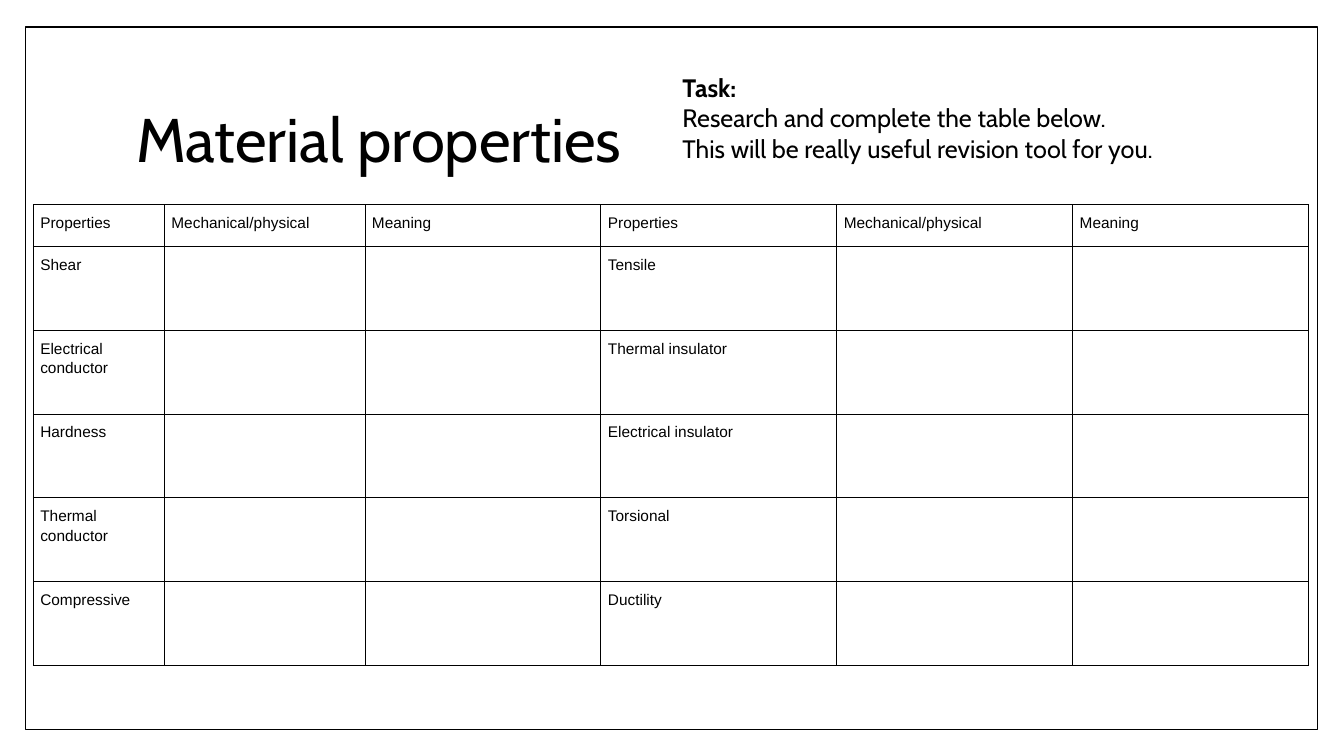
import pptx
import pptx.util
import pptx.dml.color
import pptx.enum.shapes
import pptx.enum.text
import pptx.oxml
import pptx.oxml.ns
from pptx.util import Inches

BLACK, WHITE = "000000", "FFFFFF"
HEADINGS = ["Properties", "Mechanical/physical", "Meaning"]
PROPERTY_PAIRS = [
    ("Shear", "Tensile"),
    ("Electrical conductor", "Thermal insulator"),
    ("Hardness", "Electrical insulator"),
    ("Thermal conductor", "Torsional"),
    ("Compressive", "Ductility"),
]
TASK_LINES = [
    "Task:",
    "Research and complete the table below.",
    "This will be really useful revision tool for you.",
]


def color(hex_value):
    return pptx.dml.color.RGBColor.from_string(hex_value)


class Worksheet:
    """Holds the style and the current slide."""

    display_font, table_font = "Cabin", "Arial"

    def __init__(self, page):
        self.page = page

    def format_text(self, frame, font, size, spacing=None):
        for para in frame.paragraphs:
            para.alignment = pptx.enum.text.PP_ALIGN.LEFT
            para.line_spacing = spacing
            for span in para.runs:
                span.font.name = font
                span.font.size = pptx.util.Pt(size)
                span.font.color.rgb = color(BLACK)

    def title(self, text, left, top, width, height):
        box = self.page.shapes.title
        box.left, box.top = Inches(left), Inches(top)
        box.width, box.height = Inches(width), Inches(height)
        frame = box.text_frame
        frame.text = text
        frame.auto_size = pptx.enum.text.MSO_AUTO_SIZE.NONE
        frame.vertical_anchor = pptx.enum.text.MSO_ANCHOR.MIDDLE
        self.format_text(frame, self.display_font, 44, 0.9)

    def border(self, left, top, width, height):
        box = self.page.shapes.add_shape(
            pptx.enum.shapes.MSO_SHAPE.RECTANGLE,
            Inches(left), Inches(top), Inches(width), Inches(height))
        box.shadow.inherit = False
        box.fill.solid()
        box.fill.fore_color.rgb = color(WHITE)
        box.line.color.rgb = color(BLACK)
        box.line.width = pptx.util.Pt(1)
        # The border lies behind the title
        self.page.shapes.title.element.addprevious(box.element)

    def task(self, lines, left, top, width, height):
        box = self.page.shapes.add_textbox(
            Inches(left), Inches(top), Inches(width), Inches(height))
        frame = box.text_frame
        frame.word_wrap = True
        frame.auto_size = pptx.enum.text.MSO_AUTO_SIZE.SHAPE_TO_FIT_TEXT
        frame.text = "\n".join(lines)
        self.format_text(frame, self.display_font, 18)
        frame.paragraphs[0].runs[0].font.bold = True

    def cell(self, cell, text):
        cell.margin_left = cell.margin_right = Inches(0.07)
        cell.margin_top = cell.margin_bottom = Inches(0.07)
        cell.text = text
        self.format_text(cell.text_frame, self.table_font, 11, 1.15)
        properties = cell._tc.get_or_add_tcPr()
        for side in "LRTB":
            properties.append(pptx.oxml.parse_xml(
                f'<a:ln{side} {pptx.oxml.ns.nsdecls("a")} w="{pptx.util.Pt(0.75)}">'
                f'<a:solidFill><a:srgbClr val="{BLACK}"/></a:solidFill></a:ln{side}>'))
        cell.fill.background()

    def table(self, rows, left, top, widths, heights):
        table = self.page.shapes.add_table(
            len(rows), len(widths), Inches(left), Inches(top),
            Inches(sum(widths)), Inches(sum(heights))).table
        table.first_row = table.horz_banding = False
        for column, width in zip(table.columns, widths):
            column.width = Inches(width)
        for row, height, texts in zip(table.rows, heights, rows):
            row.height = Inches(height)
            for cell, text in zip(row.cells, texts):
                self.cell(cell, text)


def main():
    deck = pptx.Presentation()
    deck.slide_width, deck.slide_height = Inches(13.33), Inches(7.5)
    sheet = Worksheet(deck.slides.add_slide(deck.slide_layouts[5]))

    # Border and heading
    sheet.border(0.25, 0.27, 12.82, 6.97)
    sheet.title("Material properties", 1.25, 0.67, 10.8, 1.48)

    # Table with two sets of the same three columns
    rows = [HEADINGS * 2]
    rows += [[first, "", "", second, "", ""] for first, second in PROPERTY_PAIRS]
    sheet.table(rows, 0.33, 2.03, [1.3, 1.99] + [2.34] * 4,
                [0.42] + [0.83] * len(PROPERTY_PAIRS))

    # Instructions
    sheet.task(TASK_LINES, 6.67, 0.67, 6.67, 1.01)

    deck.save("out.pptx")


if __name__ == "__main__":
    main()
